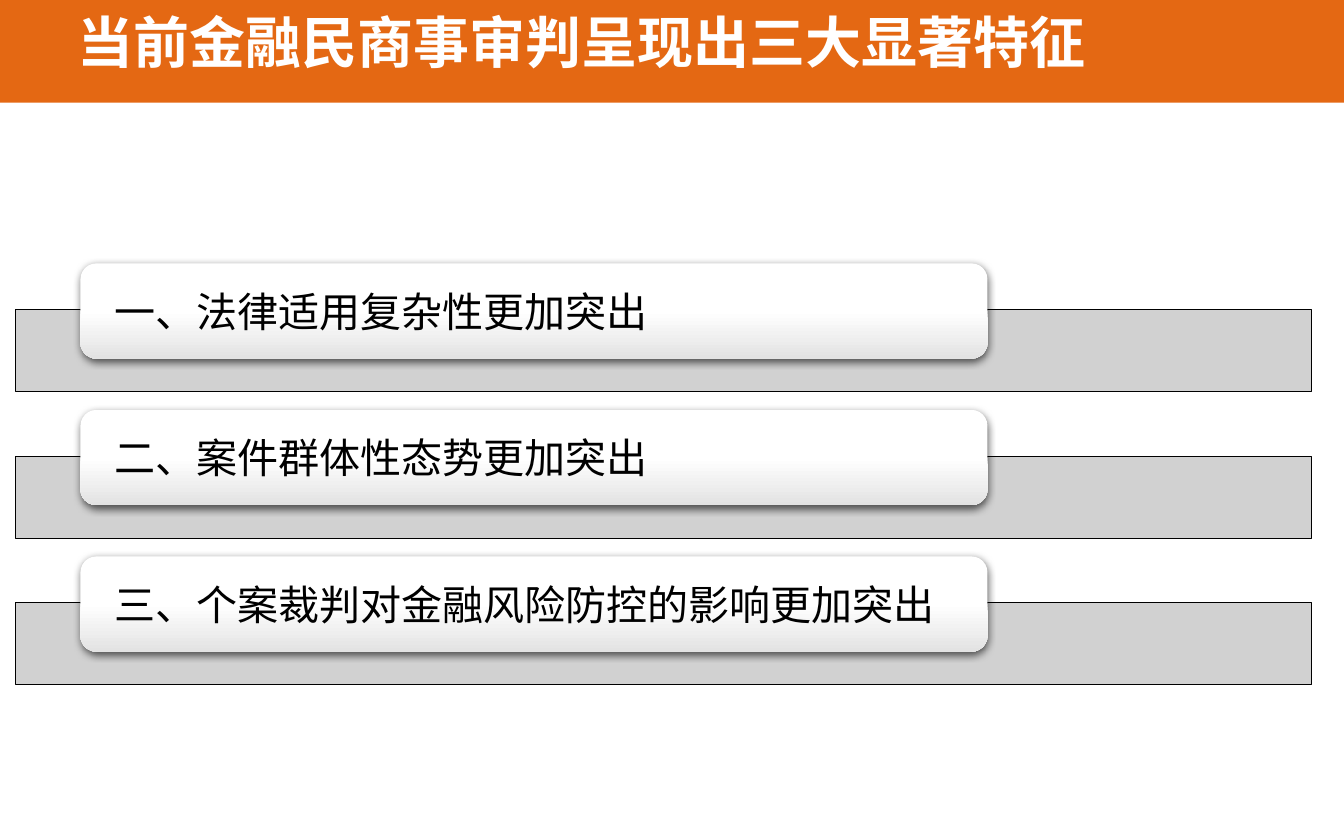
import copy

import pptx
import pptx.dml.color
import pptx.enum.lang
import pptx.enum.shapes
import pptx.enum.text
import pptx.oxml
import pptx.oxml.ns
import pptx.util
from pptx.util import Cm

COLORS = {
    "band": "E46813",
    "white": "FFFFFF",
    "black": "000000",
    "bar": "CCCCCC",
    "card_end": "E3E3E3",
}
CJK_FONT = "Noto Sans CJK SC"
TITLE = "当前金融民商事审判呈现出三大显著特征"
FEATURES = [
    "一、法律适用复杂性更加突出",
    "二、案件群体性态势更加突出",
    "三、个案裁判对金融风险防控的影响更加突出",
]
RECTANGLE = pptx.enum.shapes.MSO_SHAPE.RECTANGLE
ROUNDED = pptx.enum.shapes.MSO_SHAPE.ROUNDED_RECTANGLE
NAMESPACE = pptx.oxml.ns.nsdecls("a")


def rgb(name):
    return pptx.dml.color.RGBColor.from_string(COLORS[name])


def add_block(shapes, kind, left, top, width, height):
    block = shapes.add_shape(kind, Cm(left), Cm(top), Cm(width), Cm(height))
    block.shadow.inherit = False
    block.line.fill.background()
    return block


def add_words(paragraph, words, size, color, font, bold=False):
    run = paragraph.add_run()
    run.text = words
    run.font.size = pptx.util.Pt(size)
    run.font.bold = bold
    run.font.name = font
    run.font.color.rgb = rgb(color)
    run.font.language_id = pptx.enum.lang.MSO_LANGUAGE_ID.SIMPLIFIED_CHINESE
    east_asian = pptx.oxml.parse_xml(f'<a:ea {NAMESPACE} typeface="{CJK_FONT}"/>')
    run.font._element.find(pptx.oxml.ns.qn("a:latin")).addnext(east_asian)


def add_header(slide, left, top, width, height):
    band = add_block(slide.shapes, RECTANGLE, left, top, width, height)
    band.fill.solid()
    band.fill.fore_color.rgb = rgb("band")

    heading = slide.shapes.add_textbox(
        Cm(left + 1.22), Cm(top + 0.46), Cm(22.58), Cm(1.24)
    )
    frame = heading.text_frame
    frame.word_wrap = True
    frame.auto_size = pptx.enum.text.MSO_AUTO_SIZE.SHAPE_TO_FIT_TEXT
    paragraph = frame.paragraphs[0]
    paragraph.line_spacing = pptx.util.Pt(28)
    paragraph.space_before = pptx.util.Pt(6)
    add_words(paragraph, TITLE, 30, "white", CJK_FONT, bold=True)


def style_card(card):
    card.fill.gradient()
    card.fill.gradient_angle = 270
    start, end = card.fill.gradient_stops
    start.color.rgb = rgb("white")
    start.position = 0
    end.color.rgb = rgb("card_end")
    end.position = 1
    stops = card._element.spPr.find(".//" + pptx.oxml.ns.qn("a:gsLst"))
    middle = copy.deepcopy(stops[0])
    middle.set("pos", "50000")
    stops.insert(1, middle)

    effects = card._element.spPr.find(pptx.oxml.ns.qn("a:effectLst"))
    effects.append(pptx.oxml.parse_xml(
        f'<a:outerShdw {NAMESPACE} blurRad="57150" dist="19050" dir="5400000" '
        f'algn="ctr" rotWithShape="0"><a:srgbClr val="{COLORS["black"]}">'
        '<a:alpha val="63000"/></a:srgbClr></a:outerShdw>'
    ))


def add_feature(slide, words, left, top, width, height):
    shapes = slide.shapes.add_group_shape().shapes
    bar_height = 1.55
    bar = add_block(shapes, RECTANGLE, left, top + height - bar_height, width, bar_height)
    bar.fill.solid()
    bar.fill.fore_color.rgb = rgb("bar")
    bar_color = bar._element.spPr.find(".//" + pptx.oxml.ns.qn("a:srgbClr"))
    bar_color.append(pptx.oxml.parse_xml(f'<a:alpha {NAMESPACE} val="90000"/>'))
    bar.line.color.rgb = rgb("black")
    bar.line.width = pptx.util.Pt(0.5)

    card_box = (left + 1.22, top, width * 0.7, 1.8)
    style_card(add_block(shapes, ROUNDED, *card_box))

    label = shapes.add_textbox(*map(Cm, card_box))
    frame = label.text_frame
    frame.word_wrap = True
    frame.vertical_anchor = pptx.enum.text.MSO_ANCHOR.MIDDLE
    frame.margin_left = frame.margin_right = Cm(0.64)
    frame.margin_top = frame.margin_bottom = 0
    paragraph = frame.paragraphs[0]
    paragraph.space_after = pptx.util.Pt(7.7)
    add_words(paragraph, words, 22, "black", "Arial")


def add_features(slide, left, top, width, pitch):
    for index, words in enumerate(FEATURES):
        add_feature(slide, words, left, top + index * pitch, width, 2.43)


def main():
    deck = pptx.Presentation()
    deck.slide_width = Cm(25.4)
    deck.slide_height = Cm(15.88)
    slide = deck.slides.add_slide(deck.slide_layouts[6])
    add_header(slide, 0, -0.16, 25.4, 2.1)
    add_features(slide, 0.3, 4.98, 24.49, 2.77)
    deck.save("out.pptx")


if __name__ == "__main__":
    main()
